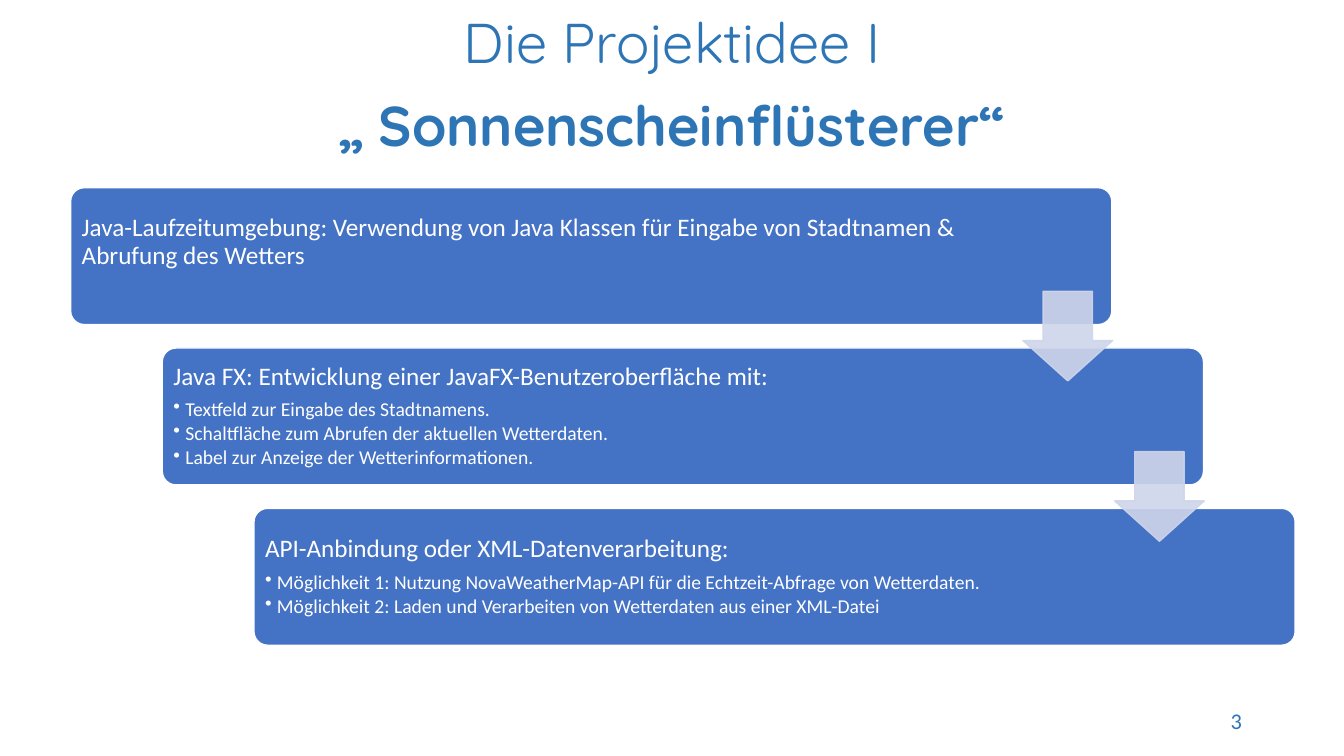
from lxml.etree import SubElement
from pptx import Presentation
from pptx.dml.color import RGBColor
from pptx.enum.shapes import MSO_SHAPE as Shape
from pptx.enum.text import MSO_ANCHOR as Anchor, PP_ALIGN as Align
from pptx.oxml.ns import qn
from pptx.util import Cm, Pt

WHITE = RGBColor(0xFF, 0xFF, 0xFF)
TITLE_BLUE = RGBColor(0x2E, 0x75, 0xB6)
BOX_BLUE = RGBColor(0x44, 0x72, 0xC4)
ARROW_BLUE = RGBColor(0xCF, 0xD5, 0xEA)

STEPS = [
    ("Java-Laufzeitumgebung: Verwendung von Java Klassen für Eingabe von "
     "Stadtnamen & Abrufung des Wetters", []),
    ("Java FX: Entwicklung einer JavaFX-Benutzeroberfläche mit:",
     ["Textfeld zur Eingabe des Stadtnamens.",
      "Schaltfläche zum Abrufen der aktuellen Wetterdaten.",
      "Label zur Anzeige der Wetterinformationen."]),
    ("API-Anbindung oder XML-Datenverarbeitung:",
     ["Möglichkeit 1: Nutzung NovaWeatherMap-API für die Echtzeit-Abfrage "
      "von Wetterdaten.",
      "Möglichkeit 2: Laden und Verarbeiten von Wetterdaten aus einer XML-Datei"]),
]
STEP_X, STEP_Y = 2.31, 4.04


def add_filled(kind, left, top, width, height, color, line_color):
    s = slide.shapes.add_shape(kind, Cm(left), Cm(top), Cm(width), Cm(height))
    s.shadow.inherit = False
    s.fill.solid()
    s.fill.fore_color.rgb = color
    s.line.color.rgb = line_color
    s.line.width = Pt(1)
    return s


def write(p, text, size, color=WHITE, font="Calibri", bold=False,
          align=Align.LEFT, spacing=None, after=None, bullet=False):
    """Fill one paragraph with a formatted run."""
    p.alignment = align
    p.line_spacing = spacing
    if after is not None:
        p.space_after = Pt(after)
    if bullet:
        p.level = 1
        pPr = p._p.get_or_add_pPr()
        pPr.set("marL", str(Cm(0.3)))
        pPr.set("indent", str(-Cm(0.3)))
        SubElement(pPr, qn("a:buChar"), char="•")
    r = p.add_run()
    r.text = text
    r.font.size = Pt(size)
    r.font.name = font
    r.font.bold = bold
    r.font.color.rgb = color


prs = Presentation()
prs.slide_width, prs.slide_height = Cm(33.87), Cm(19.05)
slide = prs.slides.add_slide(prs.slide_layouts[6])

# Title lines
titles = [("Die Projektidee I", False), ("„ Sonnenscheinflüsterer“", True)]
for i, (title, bold) in enumerate(titles):
    s = add_filled(Shape.RECTANGLE, 0, i * 2.08, 33.87, 2.08, WHITE, WHITE)
    s.text_frame.vertical_anchor = Anchor.MIDDLE
    write(s.text_frame.paragraphs[0], title, 40, color=TITLE_BLUE,
          font="Quicksand", bold=bold, align=Align.CENTER)

# Slide number
tf = slide.shapes.add_textbox(Cm(23.93), Cm(17.65), Cm(7.62), Cm(1.02)).text_frame
tf.word_wrap = True
tf.vertical_anchor = Anchor.MIDDLE
write(tf.paragraphs[0], "3", 16, color=TITLE_BLUE, align=Align.RIGHT)

# Staircase of steps
for i, (heading, points) in enumerate(STEPS):
    left, top = 1.78 + i * STEP_X, 4.73 + i * STEP_Y
    box = add_filled(Shape.ROUNDED_RECTANGLE, left, top, 26.24, 3.45, BOX_BLUE, WHITE)
    box.adjustments[0] = 0.1

    text_width = 22.5 if i == 0 else 21.46
    tf = slide.shapes.add_textbox(Cm(left + 0.1), Cm(top + 0.1),
                                  Cm(text_width), Cm(3.25)).text_frame
    tf.word_wrap = True
    tf.vertical_anchor = Anchor.MIDDLE
    tf.margin_left = tf.margin_right = tf.margin_top = Cm(0.18)
    tf.margin_bottom = Cm(0.18 if points else 0.88)
    write(tf.paragraphs[0], heading, 18, spacing=0.9, after=6.3)
    for point in points:
        write(tf.add_paragraph(), point, 14, spacing=0.9, after=2.1, bullet=True)

# Arrows from each step to the next
for i in range(len(STEPS) - 1):
    arrow = add_filled(Shape.DOWN_ARROW, 25.78 + i * STEP_X, 7.34 + i * STEP_Y,
                       2.26, 2.26, ARROW_BLUE, ARROW_BLUE)
    arrow.adjustments[0], arrow.adjustments[1] = 0.55, 0.45
    for clr in arrow._element.spPr.iter(qn("a:srgbClr")):
        SubElement(clr, qn("a:alpha"), val="90000")

prs.save("out.pptx")
